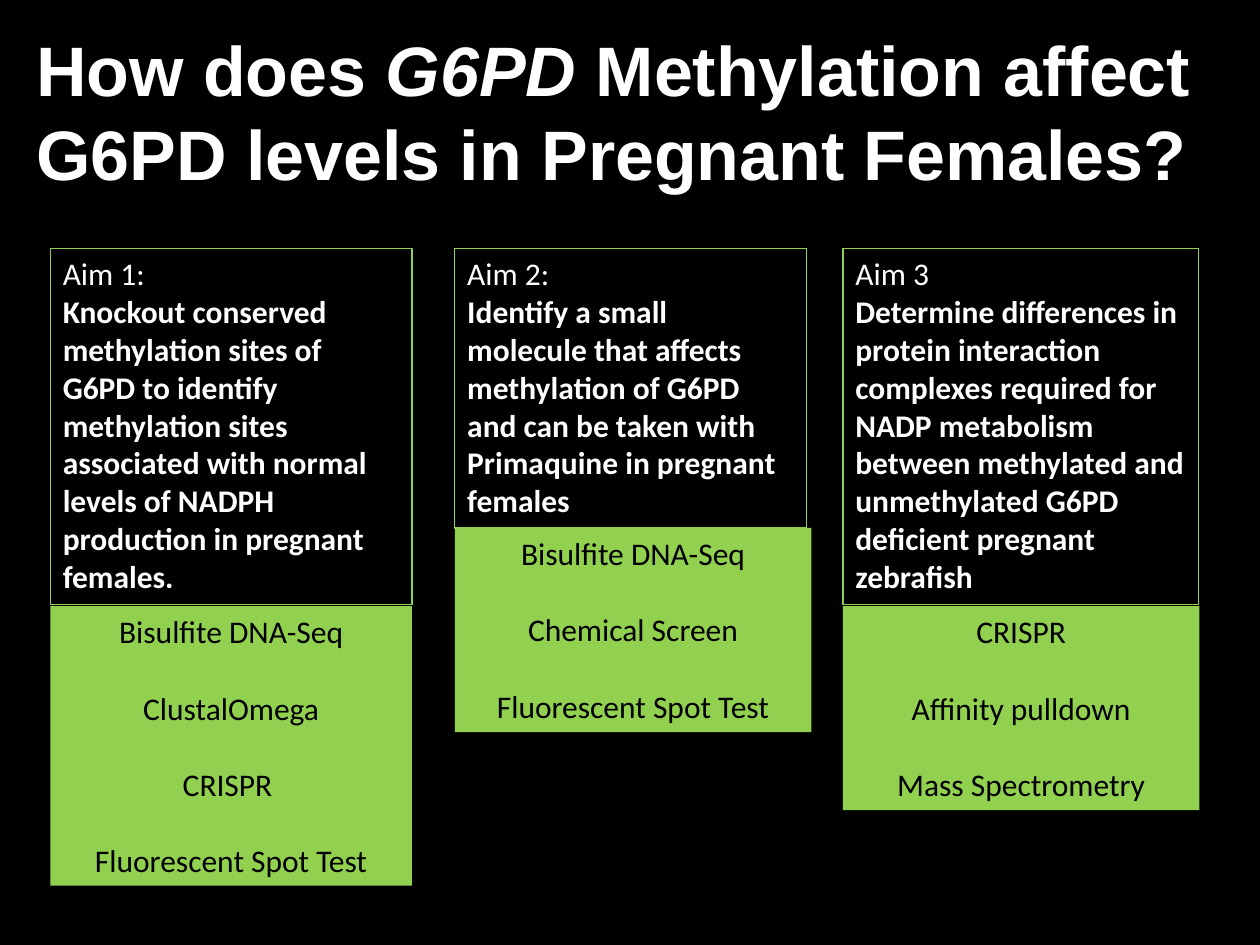
from dataclasses import dataclass

from pptx import Presentation
from pptx.dml.color import RGBColor as RGB
from pptx.enum.shapes import MSO_SHAPE as SHAPE
from pptx.enum.text import MSO_ANCHOR as ANCHOR, PP_ALIGN as ALIGN
from pptx.util import Inches, Pt


@dataclass(frozen=True)
class Theme:
    black: RGB = RGB(0x00, 0x00, 0x00)
    white: RGB = RGB(0xFF, 0xFF, 0xFF)
    green: RGB = RGB(0x92, 0xD0, 0x50)
    title_font: str = "Arial"
    body_font: str = "Calibri"
    title_size: Pt = Pt(40)
    body_size: Pt = Pt(18)
    method_gap: Pt = Pt(22)
    border: Pt = Pt(0.75)


class AimSlide:
    def __init__(self, slide, theme):
        self.slide = slide
        self.theme = theme
        fill = slide.background.fill
        fill.solid()
        fill.fore_color.rgb = theme.black

    def run(self, p, text, font, size, color, bold=False, italic=False):
        r = p.add_run()
        r.text = text
        r.font.name = font
        r.font.size = size
        r.font.color.rgb = color
        r.font.bold = bold
        r.font.italic = italic

    def title(self, runs, left, top, width, height):
        t = self.theme
        sp = self.slide.shapes.add_textbox(
            Inches(left), Inches(top), Inches(width), Inches(height))
        tf = sp.text_frame
        tf.word_wrap = True
        for text, italic in runs:
            self.run(tf.paragraphs[0], text, t.title_font, t.title_size,
                     t.white, True, italic)

    def box(self, left, top, width, height):
        sp = self.slide.shapes.add_shape(
            SHAPE.RECTANGLE, Inches(left), Inches(top),
            Inches(width), Inches(height))
        sp.shadow.inherit = False
        sp.text_frame.word_wrap = True
        sp.text_frame.vertical_anchor = ANCHOR.TOP
        return sp

    def aim(self, heading, goal, left, top, width, height):
        t = self.theme
        sp = self.box(left, top, width, height)
        sp.fill.background()
        sp.line.color.rgb = t.green
        sp.line.width = t.border
        tf = sp.text_frame
        for p, text, bold in ((tf.paragraphs[0], heading, False),
                              (tf.add_paragraph(), goal, True)):
            p.alignment = ALIGN.LEFT
            self.run(p, text, t.body_font, t.body_size, t.white, bold)

    def methods(self, names, left, top, width, height):
        t = self.theme
        sp = self.box(left, top, width, height)
        sp.fill.solid()
        sp.fill.fore_color.rgb = t.green
        sp.line.fill.background()
        tf = sp.text_frame
        for i, name in enumerate(names):
            p = tf.add_paragraph() if i else tf.paragraphs[0]
            p.alignment = ALIGN.CENTER
            if i:
                p.space_before = t.method_gap
            self.run(p, name, t.body_font, t.body_size, t.black)


TITLE = [("How does ", False), ("G6PD", True),
         (" Methylation affect G6PD levels in Pregnant Females?", False)]

AIMS = [
    ("Aim 1:",
     "Knockout conserved methylation sites of G6PD to identify methylation "
     "sites associated with normal levels of NADPH production in pregnant "
     "females.",
     ["Bisulfite DNA-Seq", "ClustalOmega", "CRISPR ", "Fluorescent Spot Test"],
     0.4, 2.87, 2.87, 2.83, 4.81),
    ("Aim 2:",
     "Identify a small molecule that affects methylation of G6PD and can be "
     "taken with Primaquine in pregnant females",
     ["Bisulfite DNA-Seq", "Chemical Screen", "Fluorescent Spot Test"],
     3.61, 2.79, 2.83, 2.22, 4.19),
    ("Aim 3",
     "Determine differences in protein interaction complexes required for "
     "NADP metabolism between methylated and unmethylated G6PD deficient "
     "pregnant zebrafish",
     ["CRISPR", "Affinity pulldown", "Mass Spectrometry"],
     6.69, 2.82, 2.83, 2.83, 4.81),
]
AIM_TOP = 1.97
METHOD_PITCH = 0.6
METHOD_BASE = -0.18


def main():
    prs = Presentation()
    prs.slide_width, prs.slide_height = Inches(10), Inches(7.5)
    s = AimSlide(prs.slides.add_slide(prs.slide_layouts[6]), Theme())
    s.title(TITLE, 0.19, 0.16, 10, 1.45)
    for heading, goal, names, left, aim_w, methods_w, aim_h, methods_top in AIMS:
        s.aim(heading, goal, left, AIM_TOP, aim_w, aim_h)
        s.methods(names, left, methods_top, methods_w,
                  METHOD_BASE + METHOD_PITCH * len(names))
    prs.save("out.pptx")


if __name__ == "__main__":
    main()
